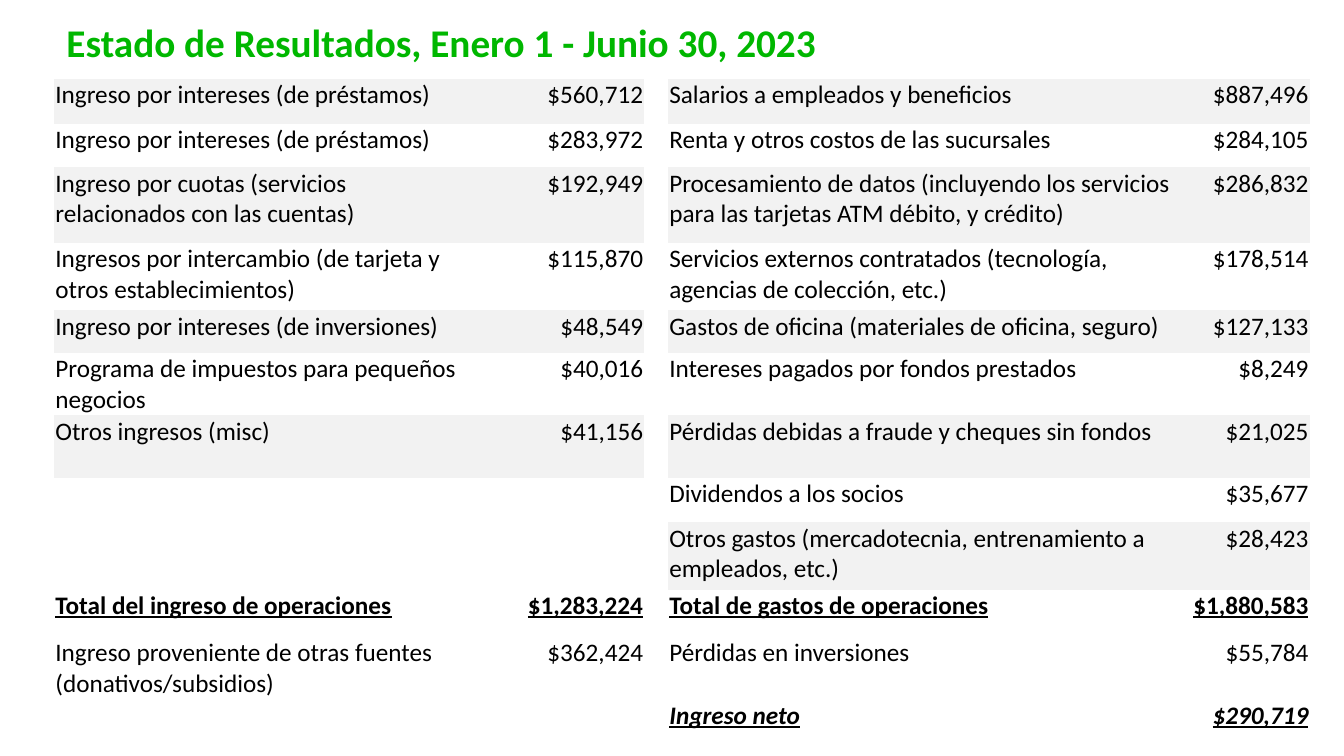
from dataclasses import dataclass

from pptx import Presentation
from pptx.dml.color import RGBColor
from pptx.enum.text import PP_ALIGN
from pptx.oxml.ns import qn
from pptx.table import Table, _Cell
from pptx.util import Inches, Pt

GREEN = RGBColor(0x00, 0xB7, 0x00)
BLACK = RGBColor(0x00, 0x00, 0x00)
GRAY = RGBColor(0xF2, 0xF2, 0xF2)
FONT = "Calibri"
PLAIN_GRID = "{2D5ABB26-0587-4C30-8999-92F81FD0307C}"

WIDTH, HEIGHT = Inches(13.33), Inches(7.5)
# Shares of the slide, in percent of its width or height
LEFT, TOP = 4.05, 1.87
COLS = [31.28, 12.6, 1.8, 38.56, 9.15]
TITLE_ROW = 8.53
TITLE = "Estado de Resultados, Enero 1 - Junio 30, 2023"


@dataclass(frozen=True)
class Style:
    size: int = 18
    color: RGBColor = BLACK
    bold: bool = False
    italic: bool = False
    line: bool = False


HEAD = Style(size=28, color=GREEN, bold=True)
BODY = Style()
TOTAL = Style(bold=True, line=True)
NET = Style(bold=True, italic=True, line=True)


@dataclass(frozen=True)
class Row:
    share: float
    income: str
    gain: str
    expense: str
    cost: str
    style: Style = BODY
    shade: bool = False


ROWS = [
    Row(6, "Ingreso por intereses (de préstamos)", "$560,712",
        "Salarios a empleados y beneficios", "$887,496", shade=True),
    Row(5.73, "Ingreso por intereses (de préstamos)", "$283,972",
        "Renta y otros costos de las sucursales", "$284,105"),
    Row(10, "Ingreso por cuotas (servicios relacionados con las cuentas)", "$192,949",
        "Procesamiento de datos (incluyendo los servicios para las tarjetas "
        "ATM débito, y crédito)", "$286,832", shade=True),
    Row(8.93, "Ingresos por intercambio (de tarjeta y otros establecimientos)", "$115,870",
        "Servicios externos contratados (tecnología, agencias de colección, etc.)",
        "$178,514"),
    Row(5.6, "Ingreso por intereses (de inversiones)", "$48,549",
        "Gastos de oficina (materiales de oficina, seguro)", "$127,133", shade=True),
    Row(8.27, "Programa de impuestos para pequeños negocios", "$40,016",
        "Intereses pagados por fondos prestados", "$8,249"),
    Row(8.27, "Otros ingresos (misc)", "$41,156",
        "Pérdidas debidas a fraude y cheques sin fondos", "$21,025", shade=True),
    Row(5.87, "", "", "Dividendos a los socios", "$35,677"),
    Row(8.93, "", "", "Otros gastos (mercadotecnia, entrenamiento a empleados, etc.)",
        "$28,423", shade=True),
    Row(6.27, "Total del ingreso de operaciones", "$1,283,224",
        "Total de gastos de operaciones", "$1,880,583", TOTAL),
    Row(8.27, "Ingreso proveniente de otras fuentes (donativos/subsidios)", "$362,424",
        "Pérdidas en inversiones", "$55,784"),
    Row(4.53, "", "", "Ingreso neto", "$290,719", NET),
]


def part(whole: int, share: float) -> int:
    return round(whole * share / 100)


def inset(cell: _Cell, side: float, top: float, base: float) -> None:
    cell.margin_left = cell.margin_right = Inches(side)
    cell.margin_top, cell.margin_bottom = Inches(top), Inches(base)


def write(cell: _Cell, text: str, style: Style, align: PP_ALIGN = PP_ALIGN.LEFT) -> None:
    para = cell.text_frame.paragraphs[0]
    para.alignment = align
    run = para.add_run()
    run.text = text
    font = run.font
    font.name, font.size = FONT, Pt(style.size)
    font.bold, font.italic, font.underline = style.bold, style.italic, style.line
    font.color.rgb = style.color


def draw_row(table: Table, index: int, row: Row) -> None:
    table.rows[index].height = part(HEIGHT, row.share)
    texts = [row.income, row.gain, "", row.expense, row.cost]
    for col, text in enumerate(texts):
        cell = table.cell(index, col)
        inset(cell, 0.01, 0.01, 0)
        if text:
            align = PP_ALIGN.RIGHT if col in (1, 4) else PP_ALIGN.LEFT
            write(cell, text, row.style, align)
        if text and row.shade:
            cell.fill.solid()
            cell.fill.fore_color.rgb = GRAY
        else:
            cell.fill.background()


def draw_title(table: Table) -> None:
    table.rows[0].height = part(HEIGHT, TITLE_ROW)
    for col in range(len(COLS)):
        table.cell(0, col).fill.background()
    cell = table.cell(0, 0)
    cell.merge(table.cell(0, 3))
    inset(cell, 0.12, 0.06, 0.06)
    write(cell, TITLE, HEAD)


def main() -> None:
    deck = Presentation()
    deck.slide_width, deck.slide_height = WIDTH, HEIGHT
    slide = deck.slides.add_slide(deck.slide_layouts[6])
    high = TITLE_ROW + sum(row.share for row in ROWS)
    frame = slide.shapes.add_table(
        len(ROWS) + 1, len(COLS), part(WIDTH, LEFT), part(HEIGHT, TOP),
        part(WIDTH, sum(COLS)), part(HEIGHT, high))
    table = frame.table
    table.first_row = table.horz_banding = False
    for tag in frame.element.iter(qn("a:tableStyleId")):
        tag.text = PLAIN_GRID
    for col, share in zip(table.columns, COLS):
        col.width = part(WIDTH, share)
    draw_title(table)
    for index, row in enumerate(ROWS, 1):
        draw_row(table, index, row)
    deck.save("out.pptx")


if __name__ == "__main__":
    main()
